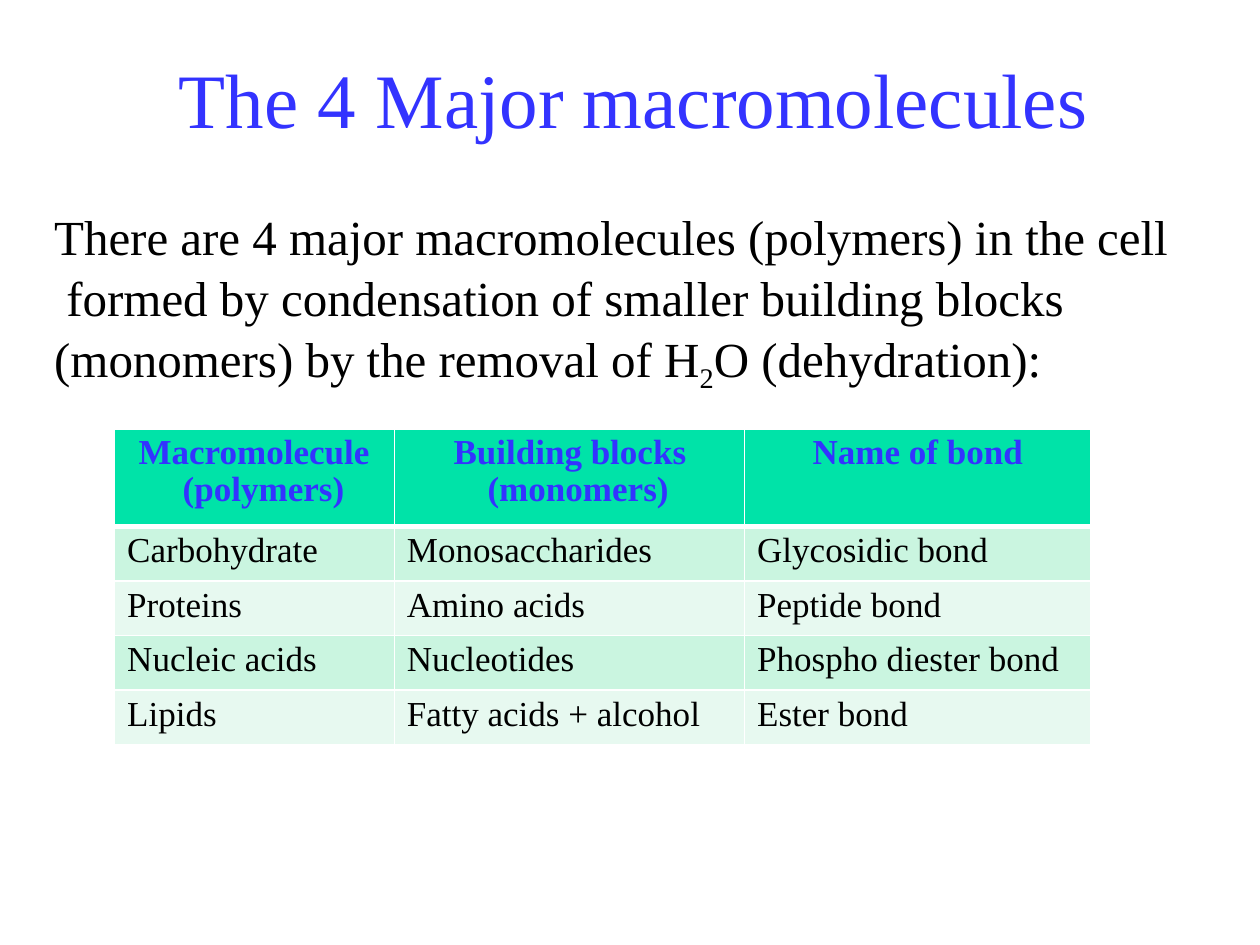
from lxml import etree
from pptx import Presentation
from pptx import util as u
from pptx.dml import color
from pptx.enum import text as t
from pptx.oxml import ns


def paint(fill, colour):
    fill.solid()
    fill.fore_color.rgb = color.RGBColor.from_string(colour)


def write(paragraph, text, size, colour="000000", bold=False, baseline=0):
    for number, line in enumerate(text.split("\n")):
        if number:
            paragraph.add_line_break()
        run = paragraph.add_run()
        run.text = line
        run.font.name = "Times New Roman"
        run.font.size = u.Pt(size)
        run.font.bold = bold
        paint(run.font.fill, colour)
        if baseline:
            run.font._element.set("baseline", str(baseline))


presentation = Presentation()
presentation.slide_width = u.Inches(10)
presentation.slide_height = u.Inches(7.5)
column = presentation.slide_width // 100
row = presentation.slide_height // 75

slide = presentation.slides.add_slide(presentation.slide_layouts[5])
title = slide.shapes.title
title.left, title.top = int(14.2 * column), int(3.3 * row)
title.width, title.height = int(72.4 * column), int(7.6 * row)
intro = slide.shapes.add_textbox(
    int(3.9 * column), int(16.1 * row), int(89.2 * column), int(14.3 * row))

for shape, margin in ((title, 0.8), (intro, 0.1)):
    frame = shape.text_frame
    frame.margin_left = frame.margin_right = frame.margin_bottom = 0
    frame.margin_top = int(margin * row)
    frame.vertical_anchor = t.MSO_ANCHOR.TOP
    frame.auto_size = t.MSO_AUTO_SIZE.NONE
    frame.word_wrap = True
    frame.paragraphs[0].alignment = t.PP_ALIGN.LEFT

title.text_frame.word_wrap = False
write(title.text_frame.paragraphs[0], "The 4 Major macromolecules", 44, "3333FF")

paragraph = intro.text_frame.paragraphs[0]
paragraph.line_spacing = 1.04
paragraph._p.get_or_add_pPr().set("marL", str(int(0.4 * column)))
write(paragraph, "There are 4 major macromolecules (polymers) in the cell\n"
      " formed by condensation of smaller building blocks\n"
      "(monomers) by the removal of H", 28)
write(paragraph, "2", 28, baseline=-21000)
write(paragraph, "O (dehydration):", 28)

records = [
    ("Macromolecule\n(polymers)", "Building blocks\n(monomers)", "Name of bond"),
    ("Carbohydrate", "Monosaccharides", "Glycosidic bond"),
    ("Proteins", "Amino acids", "Peptide bond"),
    ("Nucleic acids", "Nucleotides", "Phospho diester bond"),
    ("Lipids", "Fatty acids + alcohol", "Ester bond"),
]
header_indents = [(5.4, -3.5), (7.4, -2.7), (5.4, 0)]
table_shape = slide.shapes.add_table(
    len(records), 3, int(9.1 * column), int(34.1 * row), int(77.5 * column), 25 * row)
table = table_shape.table
for table_column, width in zip(table.columns, (22.2, 27.8, 27.5)):
    table_column.width = int(width * column)

for row_number, record in enumerate(records):
    header = row_number == 0
    table.rows[row_number].height = int((7.7 if header else 4.33) * row)
    for column_number, words in enumerate(record):
        cell = table.cell(row_number, column_number)
        cell.margin_left = cell.margin_right = cell.margin_bottom = 0
        cell.margin_top = int(0.4 * row)
        properties = cell._tc.get_or_add_tcPr()
        for side in "LRTB":
            thick = (side, row_number) in (("B", 0), ("T", 1))
            line = etree.SubElement(properties, ns.qn(f"a:ln{side}"),
                                    w=str(u.Pt(3 if thick else 1)))
            fill = etree.SubElement(line, ns.qn("a:solidFill"))
            etree.SubElement(fill, ns.qn("a:srgbClr"), val="FFFFFF")
        paint(cell.fill, "00E3A8" if header else ("E7F9F0", "CAF5E0")[row_number % 2])
        paragraph = cell.text_frame.paragraphs[0]
        paragraph.alignment = t.PP_ALIGN.LEFT
        left, first = header_indents[column_number] if header else (1, 0)
        layout = paragraph._p.get_or_add_pPr()
        layout.set("marL", str(int(left * column)))
        layout.set("indent", str(int(first * column)))
        if header:
            paragraph.line_spacing = 0.95
        write(paragraph, words, 20, "3333FF" if header else "000000", header)

presentation.save("out.pptx")
